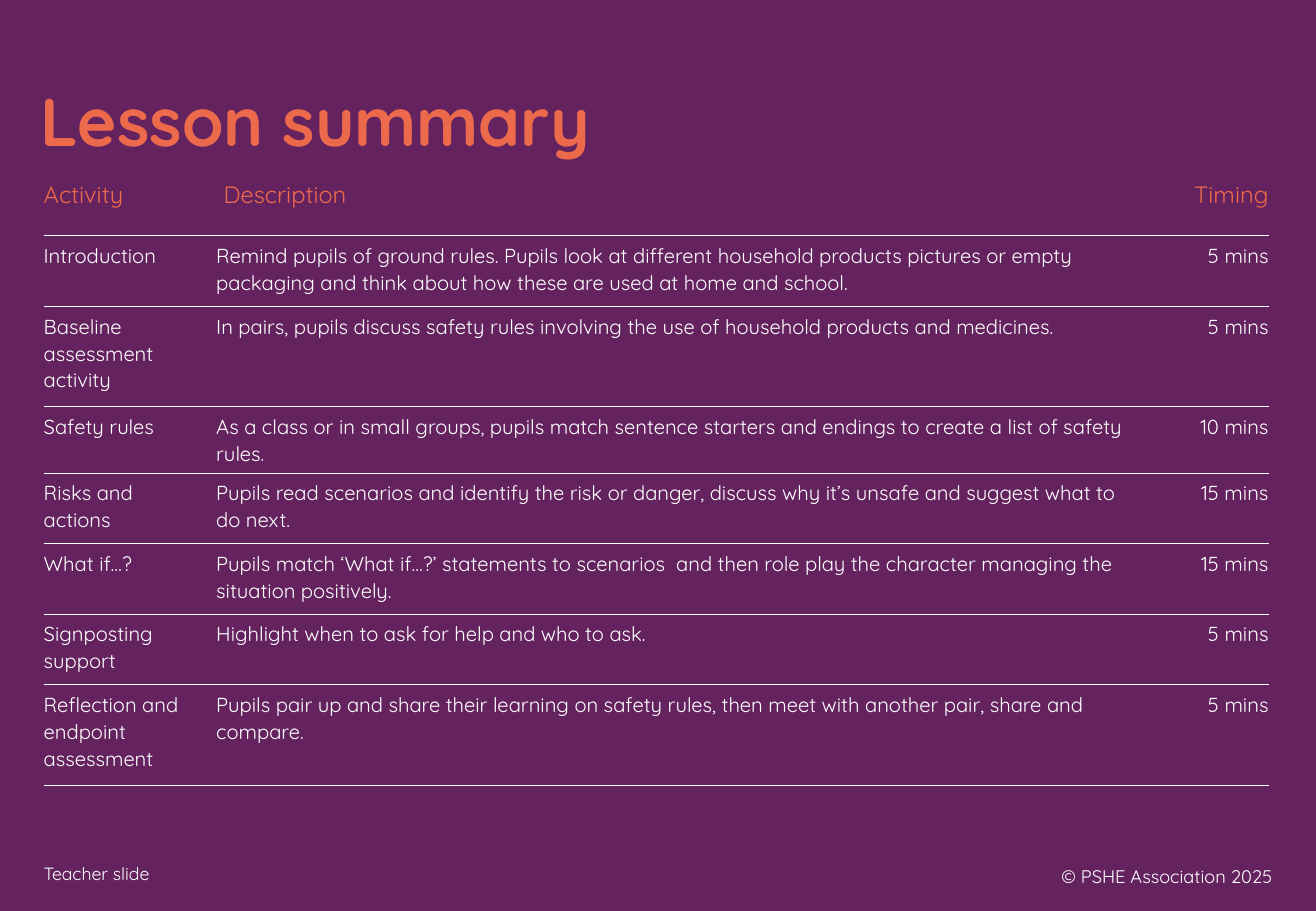
from lxml.etree import SubElement
from pptx import Presentation
from pptx.dml.color import RGBColor
from pptx.enum.text import MSO_ANCHOR as Anchor, PP_ALIGN as Align
from pptx.oxml import parse_xml
from pptx.oxml.ns import nsdecls, qn
from pptx.util import Pt

COLORS = {"plum": "64235E", "coral": "ED694B", "white": "FFFFFF"}
FONT = "Quicksand"
PX = 9144
NO_STYLE = "{2D5ABB26-0587-4C30-8999-92F81FD0307C}"

TITLE = "Lesson summary"
FOOTER = "Teacher slide"
COPYRIGHT = "© PSHE Association 2025"
HEADINGS = ("Activity", "Description", "Timing")
ACTIVITIES = [
    ("Introduction",
     "Remind pupils of ground rules. Pupils look at different household products pictures or empty "
     "packaging and think about how these are used at home and school.",
     "5 mins"),
    ("Baseline assessment activity",
     "In pairs, pupils discuss safety rules involving the use of household products and medicines.",
     "5 mins"),
    ("Safety rules",
     "As a class or in small groups, pupils match sentence starters and endings to create a list of "
     "safety rules.",
     "10 mins"),
    ("Risks and actions",
     "Pupils read scenarios and identify the risk or danger, discuss why it’s unsafe and suggest what "
     "to do next.",
     "15 mins"),
    ("What if…?",
     "Pupils match ‘What if…?’ statements to scenarios  and then role play the character managing the "
     "situation positively.",
     "15 mins"),
    ("Signposting support", "Highlight when to ask for help and who to ask.", "5 mins"),
    ("Reflection and endpoint assessment",
     "Pupils pair up and share their learning on safety rules, then meet with another pair, share and "
     "compare.",
     "5 mins"),
]
COLUMN_WIDTHS = (132, 771, 105)
ROW_HEIGHTS = (68, 58, 83, 50, 58, 58, 58, 83)
ALIGNMENTS = (Align.LEFT, Align.LEFT, Align.RIGHT)
HEADING_INSETS = ((0, 8, 8, 8), (16, 8, 8, 8), (8, 8, 0, 8))
BODY_INSETS = ((0, 5, 10, 5), (10, 5, 10, 5), (10, 5, 0, 5))


def write(frame, text, size, color="white", bold=False, align=Align.LEFT, spacing=None):
    para = frame.paragraphs[0]
    para.alignment = align
    if spacing:
        para.line_spacing = spacing
    span = para.add_run()
    span.text = text
    span.font.name = FONT
    span.font.size = Pt(size)
    span.font.bold = bold
    span.font.color.rgb = RGBColor.from_string(COLORS[color])


def place(shape, left, top, width, height):
    shape.left, shape.top = left * PX, top * PX
    shape.width, shape.height = width * PX, height * PX


def add_label(page, area, text, size, anchor=Anchor.TOP, align=Align.LEFT):
    box = page.shapes.add_textbox(*(side * PX for side in area))
    box.text_frame.word_wrap = True
    box.text_frame.vertical_anchor = anchor
    write(box.text_frame, text, size, align=align)


def format_cell(cell, insets, anchor):
    left, top, right, bottom = (inset * PX for inset in insets)
    cell.margin_left, cell.margin_top = left, top
    cell.margin_right, cell.margin_bottom = right, bottom
    cell.vertical_anchor = anchor
    cell.fill.background()
    rule = parse_xml(f'<a:lnB {nsdecls("a")} w="{Pt(0.5)}"/>')
    fill = SubElement(rule, qn("a:solidFill"))
    SubElement(fill, qn("a:srgbClr"), val=COLORS["white"])
    cell._tc.get_or_add_tcPr().insert(0, rule)


def add_summary(page):
    rows = [HEADINGS, *ACTIVITIES]
    frame = page.shapes.add_table(len(rows), len(HEADINGS), 36 * PX, 126 * PX,
                                  sum(COLUMN_WIDTHS) * PX, sum(ROW_HEIGHTS) * PX)
    table = frame.table
    table.first_row = table.horz_banding = False
    table._tbl.tblPr.find(qn("a:tableStyleId")).text = NO_STYLE
    for column, width in zip(table.columns, COLUMN_WIDTHS):
        column.width = width * PX
    for row, height in zip(table.rows, ROW_HEIGHTS):
        row.height = height * PX
    for r, texts in enumerate(rows):
        for c, text in enumerate(texts):
            cell = table.cell(r, c)
            if r == 0:
                format_cell(cell, HEADING_INSETS[c], Anchor.MIDDLE)
                write(cell.text_frame, text, 14, color="coral", align=ALIGNMENTS[c])
            else:
                format_cell(cell, BODY_INSETS[c], Anchor.TOP)
                write(cell.text_frame, text, 12, align=ALIGNMENTS[c], spacing=Pt(16))


def main():
    deck = Presentation()
    deck.slide_width, deck.slide_height = 1083 * PX, 750 * PX
    page = deck.slides.add_slide(deck.slide_layouts[5])
    page.background.fill.solid()
    page.background.fill.fore_color.rgb = RGBColor.from_string(COLORS["plum"])

    title = page.shapes.title
    place(title, 23, 65, 820, 76)
    title.text_frame.vertical_anchor = Anchor.MIDDLE
    write(title.text_frame, TITLE, 40, color="coral", bold=True, spacing=0.9)

    add_label(page, (26, 705, 678, 29), FOOTER, 10.5)
    add_label(page, (813, 701, 244, 40), COPYRIGHT, 10.8, anchor=Anchor.MIDDLE, align=Align.RIGHT)
    add_summary(page)
    deck.save("out.pptx")


if __name__ == "__main__":
    main()
